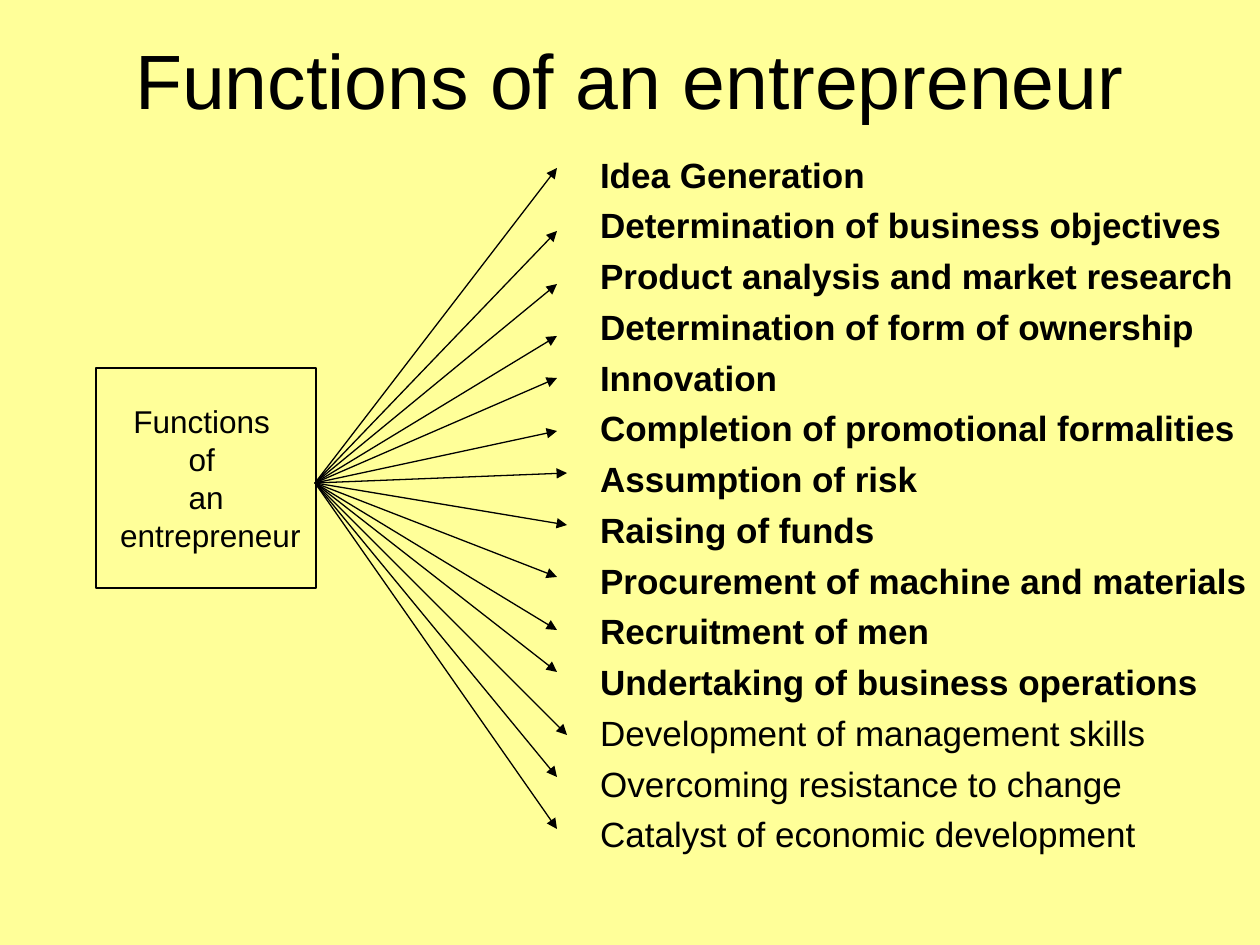
"""Build the slide on the functions of an entrepreneur."""
from lxml import etree
from pptx import Presentation
from pptx import util as u
from pptx.dml.color import RGBColor
from pptx.enum import shapes, text
from pptx.oxml.ns import qn

TITLE = "Functions of an entrepreneur"
HUB_LINES = ["Functions ", "of ", "an", " entrepreneur"]
KEY_FUNCTIONS = [
    "Idea Generation",
    "Determination of business objectives",
    "Product analysis and market research",
    "Determination of form of ownership",
    "Innovation",
    "Completion of promotional formalities",
    "Assumption of risk",
    "Raising of funds",
    "Procurement of machine and materials",
    "Recruitment of men",
    "Undertaking of business operations",
]
OTHER_FUNCTIONS = [
    "Development of management skills",
    "Overcoming resistance to change",
    "Catalyst of economic development",
]
ARROW_START = (315, 483)
ARROW_ENDS = [
    (557, 168), (557, 231), (557, 284), (557, 336), (557, 378),
    (557, 431), (567, 473), (567, 525), (557, 577), (557, 630),
    (557, 672), (567, 735), (557, 777), (557, 829),
]
COLORS = {"background": "FFFF99", "ink": "000000"}
FONT = "Arial"


def px(value):
    return u.Emu(round(value * 914400 / 126))


def color(name):
    return RGBColor.from_string(COLORS[name])


def place(shape, left, top, width, height):
    shape.left, shape.top = px(left), px(top)
    shape.width, shape.height = px(width), px(height)


def write(frame, lines, size, align, bold_count=0, space_before=0,
          anchor=text.MSO_ANCHOR.MIDDLE, wrap=True):
    frame.word_wrap = wrap
    frame.auto_size = text.MSO_AUTO_SIZE.NONE
    frame.vertical_anchor = anchor
    for index, line in enumerate(lines):
        paragraph = frame.add_paragraph() if index else frame.paragraphs[0]
        paragraph.alignment = align
        paragraph.space_before = u.Pt(space_before)
        run = paragraph.add_run()
        run.text = line
        run.font.name = FONT
        run.font.size = u.Pt(size)
        run.font.bold = index < bold_count
        run.font.color.rgb = color("ink")


def add_arrow(slide, start, end):
    arrow = slide.shapes.add_connector(
        shapes.MSO_CONNECTOR.STRAIGHT, *map(px, start + end))
    arrow.line.color.rgb = color("ink")
    arrow.line.width = u.Pt(0.75)
    line = arrow.line._get_or_add_ln()
    etree.SubElement(line, qn("a:tailEnd"), type="triangle")
    etree.SubElement(arrow._element.spPr, qn("a:effectLst"))


def main():
    presentation = Presentation()
    presentation.slide_width, presentation.slide_height = px(1260), px(945)
    slide = presentation.slides.add_slide(presentation.slide_layouts[5])
    slide.background.fill.solid()
    slide.background.fill.fore_color.rgb = color("background")

    title = slide.shapes.title
    place(title, 63, 0, 1134, 158)
    write(title.text_frame, [TITLE], 44, text.PP_ALIGN.CENTER)

    functions = slide.shapes.add_textbox(px(168), px(147), px(1092), px(777))
    functions.text_frame.margin_left = px(432)
    functions.text_frame.margin_right = 0
    write(functions.text_frame, KEY_FUNCTIONS + OTHER_FUNCTIONS, 20,
          text.PP_ALIGN.LEFT, bold_count=len(KEY_FUNCTIONS), space_before=5,
          anchor=text.MSO_ANCHOR.TOP)

    hub = slide.shapes.add_shape(
        shapes.MSO_SHAPE.RECTANGLE, px(96), px(368), px(220), px(220))
    hub.shadow.inherit = False
    hub.fill.solid()
    hub.fill.fore_color.rgb = color("background")
    hub.line.color.rgb = color("ink")
    hub.line.width = u.Pt(0.75)
    write(hub.text_frame, HUB_LINES, 18, text.PP_ALIGN.CENTER, wrap=False)

    for end in ARROW_ENDS:
        add_arrow(slide, ARROW_START, end)

    presentation.save("out.pptx")


if __name__ == "__main__":
    main()
